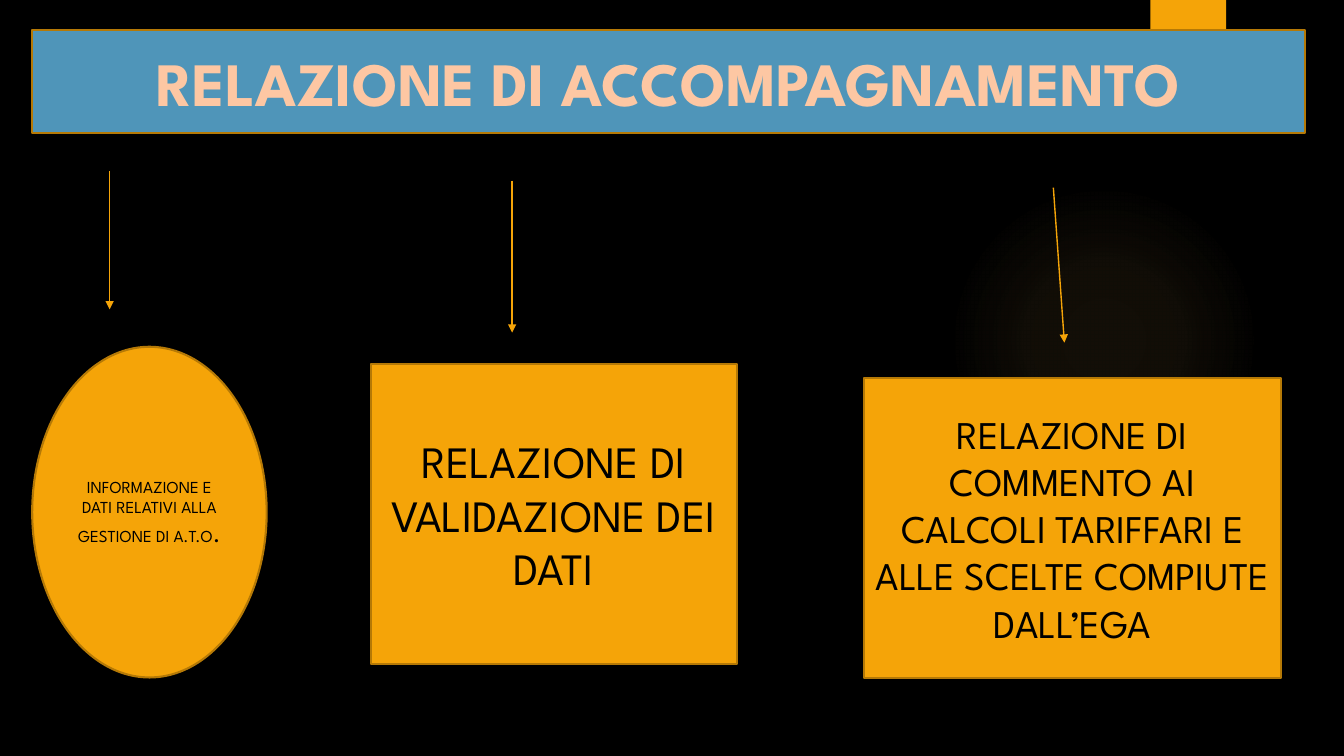
import pptx
import pptx.dml.color
import pptx.enum.shapes
import pptx.enum.text
import pptx.oxml
import pptx.util
from lxml import etree

Pt = pptx.util.Pt
RGBColor = pptx.dml.color.RGBColor
SHAPE = pptx.enum.shapes.MSO_SHAPE

BLACK = RGBColor(0x00, 0x00, 0x00)
ORANGE = RGBColor(0xF5, 0xA4, 0x08)
BROWN = RGBColor(0xB5, 0x79, 0x06)
BLUE = RGBColor(0x4F, 0x95, 0xB9)
PEACH = RGBColor(0xFD, 0xC7, 0xA3)
TEXT_EDGE = RGBColor(0xFA, 0x73, 0x1A)
GLOW = RGBColor(0xFA, 0xC9, 0x6A)
FONT = "League Spartan"
NS = 'xmlns:a="http://schemas.openxmlformats.org/drawingml/2006/main"'


def paint(sp, fill, line=None):
    """Give a shape a solid fill and an optional outline."""
    sp.fill.solid()
    sp.fill.fore_color.rgb = fill
    if line is None:
        sp.line.fill.background()
    else:
        sp.line.color.rgb = line
        sp.line.width = Pt(1.5)


def add_block(s, box, geometry, fill, line=None):
    """Add a flat preset shape in the given box."""
    sp = s.shapes.add_shape(geometry, *(Pt(v) for v in box))
    sp.shadow.inherit = False
    paint(sp, fill, line)
    return sp


def add_text(p, text, size, color=BLACK, bold=False):
    """Append a formatted run to a centred paragraph."""
    p.alignment = pptx.enum.text.PP_ALIGN.CENTER
    r = p.add_run()
    r.text = text
    r.font.name = FONT
    r.font.size = Pt(size)
    r.font.bold = bold
    r.font.color.rgb = color
    return r


def middle_frame(sp):
    """Return the wrapped, vertically centred text frame of a shape."""
    tf = sp.text_frame
    tf.word_wrap = True
    tf.auto_size = pptx.enum.text.MSO_AUTO_SIZE.NONE
    tf.vertical_anchor = pptx.enum.text.MSO_ANCHOR.MIDDLE
    return tf


def add_glow(s, box):
    """Add the faint round light."""
    sp = add_block(s, box, SHAPE.OVAL, GLOW)
    stops = "".join(
        f'<a:gs pos="{pos * 1000}"><a:srgbClr val="{GLOW}">'
        f'<a:alpha val="{alpha * 1000}"/></a:srgbClr></a:gs>'
        for pos, alpha in ((0, 7), (36, 6), (69, 0)))
    grad = pptx.oxml.parse_xml(
        f'<a:gradFill {NS}><a:gsLst>{stops}</a:gsLst><a:path path="circle">'
        '<a:fillToRect l="50000" t="50000" r="50000" b="50000"/>'
        '</a:path></a:gradFill>')
    solid = sp._element.spPr.find(pptx.oxml.ns.qn("a:solidFill"))
    sp._element.spPr.replace(solid, grad)


def add_banner(s, box, text):
    """Turn the title placeholder into a rounded banner."""
    sp = s.shapes.title
    s.shapes._spTree.append(sp._element)
    sp.left, sp.top, sp.width, sp.height = (Pt(v) for v in box)
    sp._element.spPr.append(pptx.oxml.parse_xml(
        f'<a:prstGeom {NS} prst="roundRect"><a:avLst/></a:prstGeom>'))
    paint(sp, BLUE, BROWN)
    r = add_text(middle_frame(sp).paragraphs[0], text, 44, PEACH, bold=True)
    r.font._element.insert(0, pptx.oxml.parse_xml(
        f'<a:ln {NS} w="{Pt(1.75)}"><a:solidFill>'
        f'<a:srgbClr val="{TEXT_EDGE}"/></a:solidFill></a:ln>'))


def add_arrow(s, start, end):
    """Add a thin orange arrow."""
    c = s.shapes.add_connector(
        pptx.enum.shapes.MSO_CONNECTOR.STRAIGHT, *(Pt(v) for v in start + end))
    c.line.color.rgb = ORANGE
    c.line.width = Pt(1)
    ln = c.line._get_or_add_ln()
    etree.SubElement(ln, pptx.oxml.ns.qn("a:tailEnd"), type="triangle")
    etree.SubElement(c._element.spPr, pptx.oxml.ns.qn("a:effectLst"))


def add_branch(s, box, geometry, runs, start, end):
    """Add a report block and its arrow, offset from the block's corner."""
    x, y = box[:2]
    add_arrow(s, (x + start[0], y + start[1]), (x + end[0], y + end[1]))
    p = middle_frame(add_block(s, box, geometry, ORANGE, BROWN)).paragraphs[0]
    for text, size in runs:
        add_text(p, text, size)


def build_slide(prs):
    """Build the slide on the accompanying report."""
    s = prs.slides.add_slide(prs.slide_layouts[5])
    s.background.fill.solid()
    s.background.fill.fore_color.rgb = BLACK
    add_glow(s, (677.5, 131.8, 221.8, 221.8))
    add_block(s, (821.8, 0, 54, 90), SHAPE.RECTANGLE, ORANGE)
    add_banner(s, (23, 21.6, 909.4, 73.4), "RELAZIONE DI ACCOMPAGNAMENTO")
    add_branch(s, (23, 247.7, 167.5, 236.2), SHAPE.OVAL,
               [("INFORMAZIONE E DATI RELATIVI ALLA GESTIONE DI A.T.O", 12),
                (".", 18)],
               (55.3, -125.3), (55.3, -26.7))
    add_branch(s, (264.8, 260, 261.4, 214.6), SHAPE.RECTANGLE,
               [("RELAZIONE DI VALIDAZIONE DEI DATI", 32)],
               (101, -131), (101, -22.4))
    add_branch(s, (617, 270, 298, 214.6), SHAPE.RECTANGLE,
               [("RELAZIONE DI COMMENTO AI CALCOLI TARIFFARI E "
                 "ALLE SCELTE COMPIUTE DALL’EGA", 28)],
               (135.4, -136), (143.3, -25.2))


def main():
    """Create and save the presentation."""
    prs = pptx.Presentation()
    prs.slide_width, prs.slide_height = Pt(960), Pt(540)
    build_slide(prs)
    prs.save("out.pptx")


if __name__ == "__main__":
    main()
